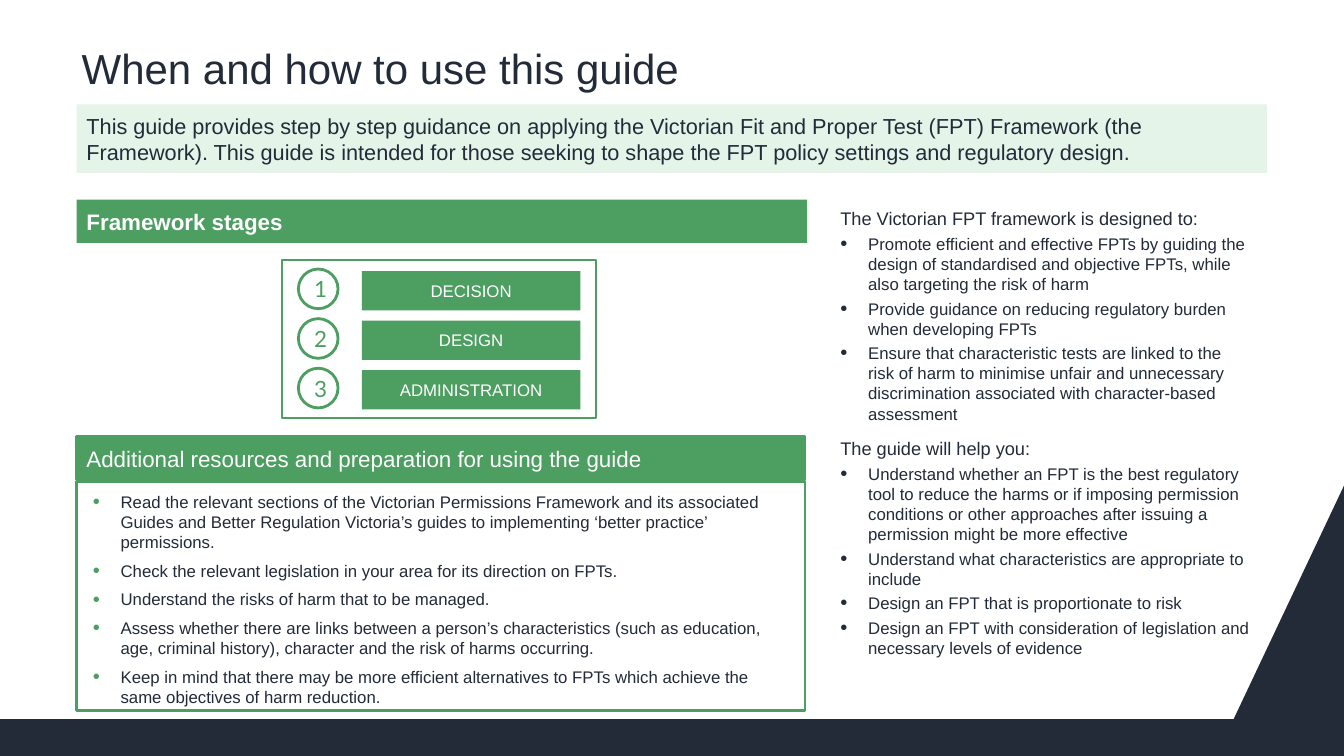
from lxml.etree import SubElement
from pptx import Presentation
from pptx.dml.color import RGBColor
from pptx.enum.shapes import MSO_SHAPE
from pptx.enum.text import MSO_ANCHOR, PP_ALIGN
from pptx.oxml.ns import qn
from pptx.util import Cm, Pt

NAVY, GREEN, MINT, WHITE = "232B39", "4C9E61", "E4F4E8", "FFFFFF"
BOX_MARGINS = (0.25, 0.13, 0.25, 0.13)
FLAT_MARGINS = (0.25, 0, 0.25, 0)
TEXT_MARGINS = (0.1, 0.13, 0.1, 0.13)

STAGES = ["DECISION", "DESIGN", "ADMINISTRATION"]
RESOURCES = [
    "Read the relevant sections of the Victorian Permissions Framework and its associated "
    "Guides and Better Regulation Victoria’s guides to implementing ‘better practice’ permissions.",
    "Check the relevant legislation in your area for its direction on FPTs.",
    "Understand the risks of harm that to be managed.",
    "Assess whether there are links between a person’s characteristics (such as education, "
    "age, criminal history), character and the risk of harms occurring.",
    "Keep in mind that there may be more efficient alternatives to FPTs which achieve the "
    "same objectives of harm reduction.",
]
PURPOSES = {
    "The Victorian FPT framework is designed to:": [
        "Promote efficient and effective FPTs by guiding the design of standardised and "
        "objective FPTs, while also targeting the risk of harm",
        "Provide guidance on reducing regulatory burden when developing FPTs",
        "Ensure that characteristic tests are linked to the risk of harm to minimise unfair and "
        "unnecessary discrimination associated with character-based assessment",
    ],
    "The guide will help you:": [
        "Understand whether an FPT is the best regulatory tool to reduce the harms or if imposing "
        "permission conditions or other approaches after issuing a permission might be more effective",
        "Understand what characteristics are appropriate to include",
        "Design an FPT that is proportionate to risk",
        "Design an FPT with consideration of legislation and necessary levels of evidence",
    ],
}


def color(value):
    return RGBColor.from_string(value)


class GuidePage:
    """Draws elements on one slide in the guide's style; lengths are in centimetres."""

    font = "Arial"

    def __init__(self, page):
        self.shapes = page.shapes

    def paint(self, shape, fill, line=None, line_width=2):
        shape.shadow.inherit = False
        shape.fill.solid()
        shape.fill.fore_color.rgb = color(fill)
        if line:
            shape.line.color.rgb = color(line)
            shape.line.width = Pt(line_width)
        else:
            shape.line.fill.background()

    def box(self, left, top, width, height, fill, line=None, line_width=2, kind=MSO_SHAPE.RECTANGLE):
        shape = self.shapes.add_shape(kind, Cm(left), Cm(top), Cm(width), Cm(height))
        self.paint(shape, fill, line, line_width)
        return shape

    def text_box(self, left, top, width, height):
        return self.shapes.add_textbox(Cm(left), Cm(top), Cm(width), Cm(height))

    def outline(self, points, fill):
        builder = self.shapes.build_freeform(Cm(points[0][0]), Cm(points[0][1]))
        builder.add_line_segments([(Cm(x), Cm(y)) for x, y in points[1:]])
        self.paint(builder.convert_to_shape(), fill)

    def frame(self, shape, margins=BOX_MARGINS, anchor=MSO_ANCHOR.MIDDLE):
        """Set up the shape's text frame and return it."""
        frame = shape.text_frame
        frame.word_wrap = True
        frame.vertical_anchor = anchor
        frame.margin_left, frame.margin_top, frame.margin_right, frame.margin_bottom = map(Cm, margins)
        return frame

    def set_text(self, para, text, size, ink=NAVY, align=PP_ALIGN.LEFT, bold=False,
                 font=None, before=0, after=0):
        para.text = text
        para.alignment = align
        para.space_before, para.space_after = Pt(before), Pt(after)
        for span in para.runs:
            span.font.name = font or self.font
            span.font.size = Pt(size)
            span.font.bold = bold
            span.font.color.rgb = color(ink)

    def bullet(self, para, ink):
        properties = para._p.get_or_add_pPr()
        properties.set("marL", str(Cm(0.7)))
        properties.set("indent", str(-Cm(0.7)))
        bullet_color = SubElement(properties, qn("a:buClr"))
        SubElement(bullet_color, qn("a:srgbClr"), val=ink)
        SubElement(properties, qn("a:buSzPct"), val="120000")
        SubElement(properties, qn("a:buFont"), typeface=self.font)
        SubElement(properties, qn("a:buChar"), char="•")

    def label(self, shape, text, size, margins=BOX_MARGINS, anchor=MSO_ANCHOR.MIDDLE, **style):
        """Put one paragraph into the shape and return it."""
        para = self.frame(shape, margins, anchor).paragraphs[0]
        self.set_text(para, text, size, **style)
        return para

    def stage(self, number, name, top):
        circle = self.box(7.52, top, 1, 1, WHITE, GREEN, kind=MSO_SHAPE.OVAL)
        self.label(circle, str(number), 16, ink=GREEN, align=PP_ALIGN.CENTER, font="Lato")
        bar = self.box(9.12, top + 0.05, 5.51, 0.99, GREEN)
        self.label(bar, name, 12, FLAT_MARGINS, ink=WHITE, align=PP_ALIGN.CENTER, after=6)

    def resources(self, items):
        panel = self.box(1.93, 12.14, 18.36, 5.77, WHITE, GREEN)
        frame = self.frame(panel, (0.41, 0.25, 0.25, 0), MSO_ANCHOR.TOP)
        for index, item in enumerate(items):
            para = frame.add_paragraph() if index else frame.paragraphs[0]
            self.set_text(para, item, 12, after=6)
            self.bullet(para, GREEN)

    def purposes(self, sections):
        frame = self.frame(self.text_box(21.08, 5.1, 10.54, 12.78), TEXT_MARGINS, MSO_ANCHOR.TOP)
        para = frame.paragraphs[0]
        for index, (heading, items) in enumerate(sections.items()):
            if index:
                para = frame.add_paragraph()
            self.set_text(para, heading, 13, before=10)
            for item in items:
                para = frame.add_paragraph()
                self.set_text(para, item, 12, before=3)
                self.bullet(para, NAVY)


def main():
    deck = Presentation()
    deck.slide_width, deck.slide_height = Cm(33.87), Cm(19.05)
    page = GuidePage(deck.slides.add_slide(deck.slide_layouts[6]))

    page.outline([(31.09, 18.12), (0, 18.12), (0, 19.05), (33.87, 19.05), (33.87, 12.24)], NAVY)

    intro = page.box(1.93, 2.63, 30, 1.73, MINT)
    page.label(intro, "This guide provides step by step guidance on applying the Victorian Fit and "
               "Proper Test (FPT) Framework (the Framework). This guide is intended for those "
               "seeking to shape the FPT policy settings and regulatory design.", 15.5)

    title = page.label(page.text_box(1.96, 0.74, 29.21, 1.75), "When and how to use this guide",
                       30, TEXT_MARGINS, MSO_ANCHOR.BOTTOM)
    title.line_spacing = 0.9

    page.purposes(PURPOSES)

    resources_heading = page.box(1.93, 11, 18.36, 1.09, GREEN, GREEN)
    page.label(resources_heading, "Additional resources and preparation for using the guide", 16,
               FLAT_MARGINS, ink=WHITE, after=6)
    page.resources(RESOURCES)

    stages_heading = page.box(1.93, 5.03, 18.41, 1.09, GREEN)
    page.label(stages_heading, "Framework stages", 16, ink=WHITE, bold=True)
    page.box(7.11, 6.55, 7.92, 3.99, WHITE, GREEN, line_width=1.5)
    for index, name in enumerate(STAGES):
        page.stage(index + 1, name, 6.78 + 1.25 * index)

    deck.save("out.pptx")


if __name__ == "__main__":
    main()
